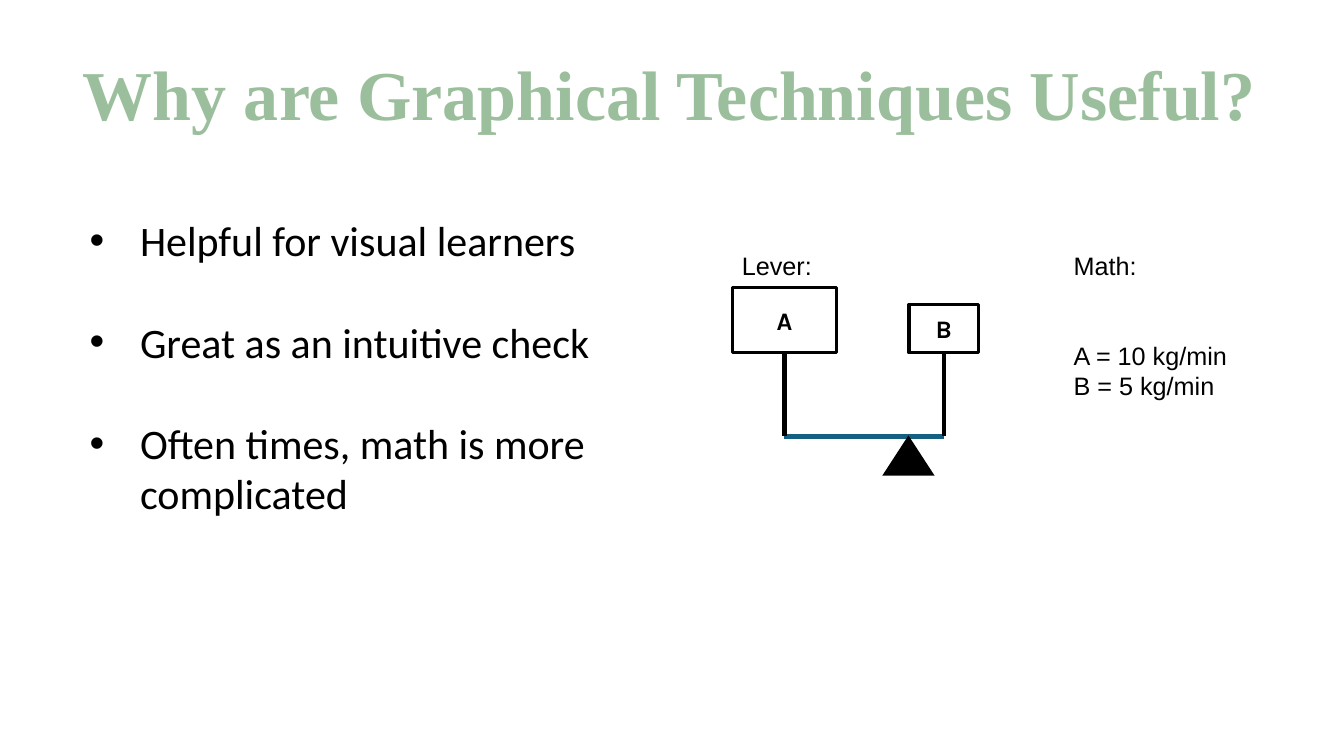
from lxml.etree import SubElement
from pptx import Presentation
from pptx.dml.color import RGBColor
from pptx.enum.shapes import MSO_CONNECTOR, MSO_SHAPE
from pptx.enum.text import MSO_ANCHOR, PP_ALIGN
from pptx.oxml.ns import qn
from pptx.util import Inches, Pt

SAGE = RGBColor(0x9B, 0xBF, 0x9C)
BLUE = RGBColor(0x15, 0x60, 0x82)
BLACK = RGBColor(0, 0, 0)
WHITE = RGBColor(255, 255, 255)

BEAM_Y = 4.33
BOX_BOTTOM = 3.5
BOTTOM_SITE = 2


class SlideBuilder:
    title_style = {"name": "Times New Roman", "size": Pt(50), "bold": True}
    bullet_style = {"name": "Calibri", "size": Pt(30)}
    label_style = {"name": "Arial", "size": Pt(18)}
    weight_style = {"name": "Karla", "size": Pt(18), "bold": True}

    def __init__(self, slide):
        self.slide = slide

    def add_styled_run(self, paragraph, text, style, color=BLACK):
        run = paragraph.add_run()
        run.text = text
        for name, value in style.items():
            setattr(run.font, name, value)
        run.font.color.rgb = color

    def text(self, box, lines, style, color=BLACK, anchor=MSO_ANCHOR.TOP):
        """Add a text box with one paragraph a line and return its paragraphs."""
        frame = self.slide.shapes.add_textbox(*map(Inches, box)).text_frame
        frame.word_wrap = True
        frame.vertical_anchor = anchor
        for index, line in enumerate(lines):
            paragraph = frame.add_paragraph() if index else frame.paragraphs[0]
            self.add_styled_run(paragraph, line, style, color)
        return frame.paragraphs

    def bullets(self, box, lines, gap):
        paragraphs = self.text(box, lines, self.bullet_style)
        for index, paragraph in enumerate(paragraphs):
            if index:
                paragraph.space_before = gap
            properties = paragraph._p.get_or_add_pPr()
            properties.set("marL", str(Inches(0.5)))
            properties.set("indent", str(Inches(-0.5)))
            SubElement(properties, qn("a:buFont"), typeface="Arial")
            SubElement(properties, qn("a:buChar"), char="•")

    def shape(self, kind, box, fill):
        shape = self.slide.shapes.add_shape(kind, *map(Inches, box))
        shape.shadow.inherit = False
        shape.fill.solid()
        shape.fill.fore_color.rgb = fill
        shape.line.fill.background()
        return shape

    def weight(self, name, center, width, height):
        """Add a labelled box that stands on the post level."""
        box = (center - width / 2, BOX_BOTTOM - height, width, height)
        shape = self.shape(MSO_SHAPE.RECTANGLE, box, WHITE)
        shape.line.color.rgb = BLACK
        shape.line.width = Pt(2.25)
        frame = shape.text_frame
        frame.vertical_anchor = MSO_ANCHOR.MIDDLE
        frame.paragraphs[0].alignment = PP_ALIGN.CENTER
        self.add_styled_run(frame.paragraphs[0], name, self.weight_style)
        return shape

    def line(self, start, end, color):
        connector = self.slide.shapes.add_connector(
            MSO_CONNECTOR.STRAIGHT, *map(Inches, (*start, *end)))
        connector.line.color.rgb = color
        connector.line.width = Pt(3)
        SubElement(connector._element.spPr, qn("a:effectLst"))
        return connector


def main():
    presentation = Presentation()
    presentation.slide_width = Inches(13.33)
    presentation.slide_height = Inches(7.5)
    slide = presentation.slides.add_slide(presentation.slide_layouts[6])
    builder = SlideBuilder(slide)

    title = builder.text((0.72, 0.33, 13.61, 1.29),
                         ["Why are Graphical Techniques Useful?"],
                         builder.title_style, SAGE, MSO_ANCHOR.MIDDLE)
    title[0].line_spacing = 0.9

    builder.bullets((0.79, 2.08, 5.82, 3.13),
                    ["Helpful for visual learners",
                     "Great as an intuitive check",
                     "Often times, math is more complicated"], Pt(36.5))

    math_lines = builder.text((10.55, 2.43, 1.92, 1.61),
                              ["Math:", "A = 10 kg/min", "B = 5 kg/min"],
                              builder.label_style)
    math_lines[1].space_before = Pt(43)

    weights = [("A", 7.78, 1.03, 0.65), ("B", 9.36, 0.69, 0.48)]
    ends = [(center, BEAM_Y) for _, center, _, _ in weights]
    builder.line(*ends, BLUE)
    for (name, center, width, height), end in zip(weights, ends):
        box = builder.weight(name, center, width, height)
        post = builder.line(end, (center, BOX_BOTTOM), BLACK)
        post.end_connect(box, BOTTOM_SITE)
    builder.shape(MSO_SHAPE.ISOSCELES_TRIANGLE, (8.75, 4.32, 0.52, 0.4), BLACK)
    builder.text((7.26, 2.43, 1.54, 0.42), ["Lever:"], builder.label_style)

    presentation.save("out.pptx")


if __name__ == "__main__":
    main()
